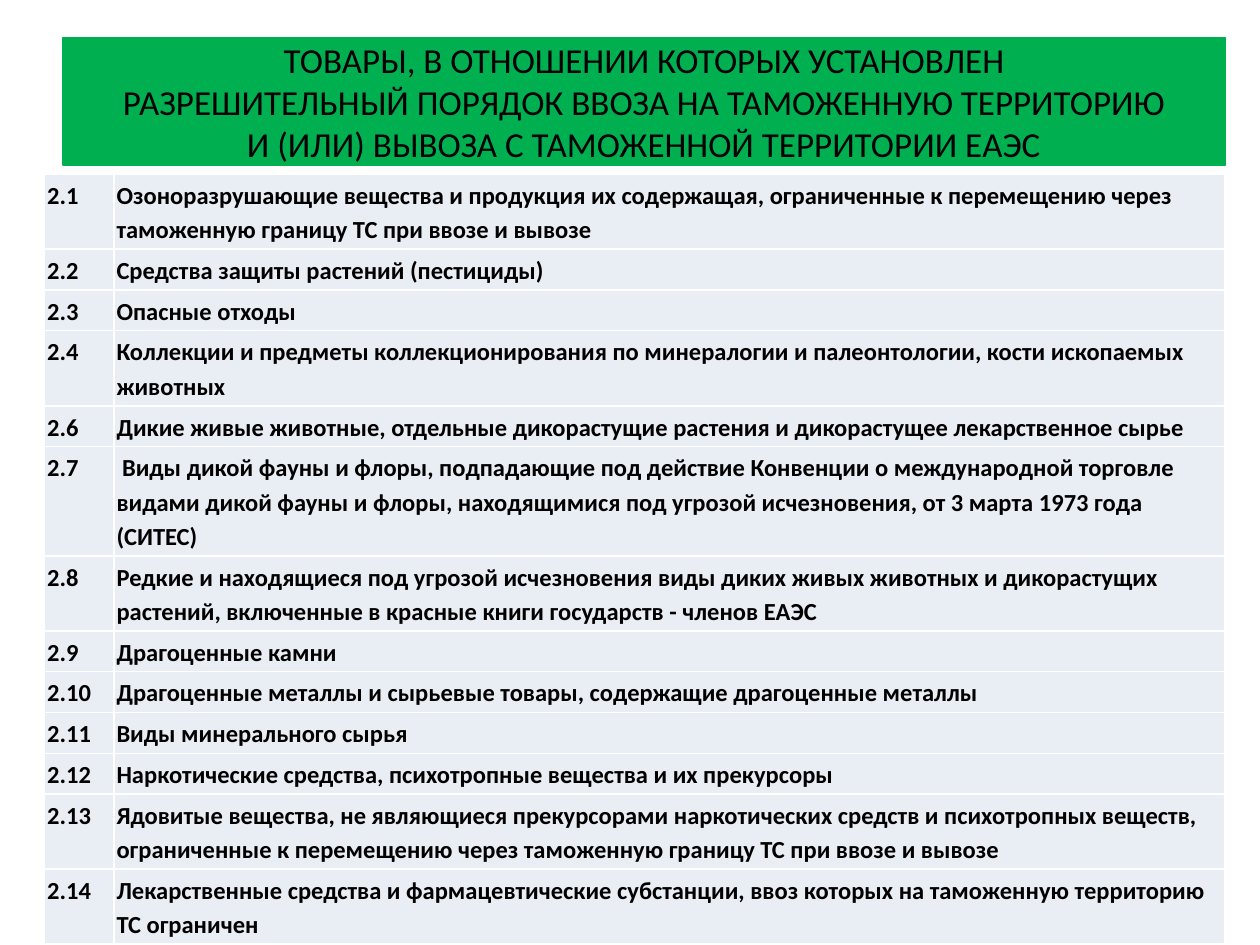
from lxml.etree import SubElement
from pptx import Presentation
from pptx.dml.color import RGBColor
from pptx.enum.text import MSO_ANCHOR, PP_ALIGN
from pptx.oxml.ns import qn
from pptx.util import Cm, Pt

COLORS = {"banner": "00B050", "cell": "E9EDF4", "border": "FFFFFF", "text": "000000"}
FONT = "Calibri"

TITLE_LINES = [
    "ТОВАРЫ, В ОТНОШЕНИИ КОТОРЫХ УСТАНОВЛЕН",
    " РАЗРЕШИТЕЛЬНЫЙ ПОРЯДОК ВВОЗА НА ТАМОЖЕННУЮ ТЕРРИТОРИЮ ",
    "И (ИЛИ) ВЫВОЗА С ТАМОЖЕННОЙ ТЕРРИТОРИИ ЕАЭС",
]

GOODS = [
    ("2.1", 0.61, "Озоноразрушающие вещества и продукция их содержащая, ограниченные "
                  "к перемещению через таможенную границу ТС при ввозе и вывозе"),
    ("2.2", 0.43, "Средства защиты растений (пестициды)"),
    ("2.3", 0.43, "Опасные отходы"),
    ("2.4", 0.66, "Коллекции и предметы коллекционирования по минералогии "
                  "и палеонтологии, кости ископаемых животных"),
    ("2.6", 0.66, "Дикие живые животные, отдельные дикорастущие растения "
                  "и дикорастущее лекарственное сырье"),
    ("2.7", 0.91, " Виды дикой фауны и флоры, подпадающие под действие Конвенции "
                  "о международной торговле видами дикой фауны и флоры, находящимися "
                  "под угрозой исчезновения, от 3 марта 1973 года (СИТЕС)"),
    ("2.8", 0.66, "Редкие и находящиеся под угрозой исчезновения виды диких живых "
                  "животных и дикорастущих растений, включенные в красные книги "
                  "государств - членов ЕАЭС"),
    ("2.9", 0.43, "Драгоценные камни"),
    ("2.10", 0.43, "Драгоценные металлы и сырьевые товары, содержащие драгоценные металлы"),
    ("2.11", 0.43, "Виды минерального сырья"),
    ("2.12", 0.43, "Наркотические средства, психотропные вещества и их прекурсоры"),
    ("2.13", 0.86, "Ядовитые вещества, не являющиеся прекурсорами наркотических средств "
                   "и психотропных веществ, ограниченные к перемещению через таможенную "
                   "границу ТС при ввозе и вывозе"),
    ("2.14", 0.61, "Лекарственные средства и фармацевтические субстанции, ввоз которых "
                   "на таможенную территорию ТС ограничен"),
]


def rgb(name):
    return RGBColor.from_string(COLORS[name])


def add_run(p, text, size, bold=False):
    r = p.add_run()
    r.text = text
    r.font.name = FONT
    r.font.size = Pt(size)
    r.font.bold = bold
    r.font.color.rgb = rgb("text")


def add_title(s, left, top, width, height):
    sp = s.shapes.title
    sp.left, sp.top, sp.width, sp.height = left, top, width, height
    sp.fill.solid()
    sp.fill.fore_color.rgb = rgb("banner")
    sp.line.color.rgb = rgb("banner")
    sp.line.width = Pt(0.75)
    tf = sp.text_frame
    tf.word_wrap = True
    tf.vertical_anchor = MSO_ANCHOR.MIDDLE
    p = tf.paragraphs[0]
    p.alignment = PP_ALIGN.CENTER
    for i, line in enumerate(TITLE_LINES):
        if i:
            p.add_line_break()
        add_run(p, line, 20)


def set_borders(cell):
    tc_pr = cell._tc.get_or_add_tcPr()
    for side in ("lnL", "lnR", "lnT", "lnB"):
        ln = SubElement(tc_pr, qn(f"a:{side}"), w=str(Pt(1)))
        fill = SubElement(ln, qn("a:solidFill"))
        SubElement(fill, qn("a:srgbClr"), val=COLORS["border"])


def fill_cell(cell, text):
    set_borders(cell)
    cell.fill.solid()
    cell.fill.fore_color.rgb = rgb("cell")
    cell.margin_left = cell.margin_right = cell.margin_top = Cm(0.05)
    cell.margin_bottom = Cm(0.08)
    p = cell.text_frame.paragraphs[0]
    p.line_spacing = 1.15
    add_run(p, text, 14, bold=True)


def add_goods_table(s, left, top, width, height):
    frame = s.shapes.add_table(len(GOODS), 2, left, top, width, height)
    table = frame.table
    table.first_row = table.horz_banding = False
    number_width = Cm(1.4)
    table.columns[0].width = number_width
    table.columns[1].width = width - number_width
    for row, (number, row_height, name) in zip(table.rows, GOODS):
        row.height = Cm(row_height)
        for cell, text in zip(row.cells, (number, name)):
            fill_cell(cell, text)
    frame.height = height


def main():
    prs = Presentation()
    prs.slide_width, prs.slide_height = Cm(25.4), Cm(19.05)
    s = prs.slides.add_slide(prs.slide_layouts[5])
    add_goods_table(s, Cm(0.9), Cm(3.51), Cm(23.8), Cm(14.07))
    add_title(s, Cm(1.27), Cm(0.76), Cm(23.43), Cm(2.57))
    prs.save("out.pptx")


if __name__ == "__main__":
    main()
